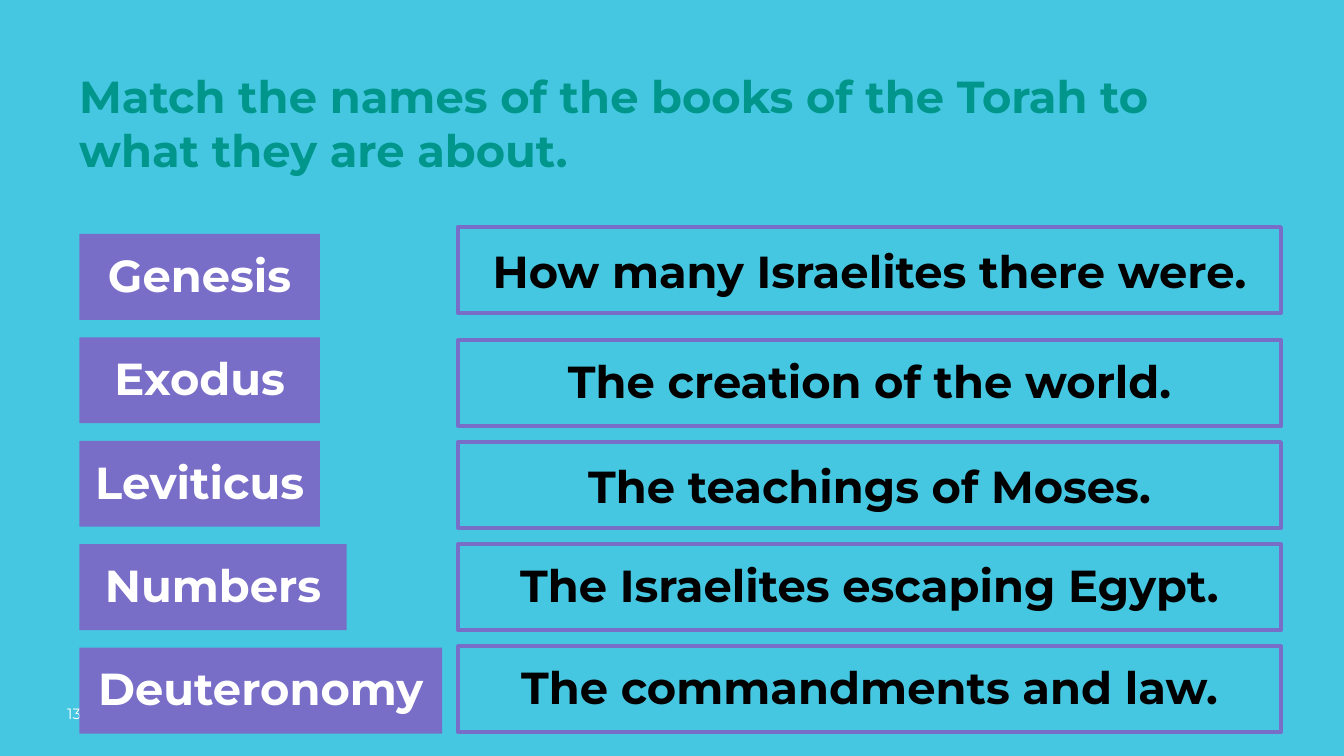
from pptx import Presentation
from pptx.dml.color import RGBColor
from pptx.enum.shapes import MSO_SHAPE
from pptx.enum.text import MSO_ANCHOR, PP_ALIGN
from pptx.util import Inches, Pt

COLORS = {"back": "45C7E1", "title": "00968C", "purple": "786EC8",
          "white": "FFFFFF", "black": "000000"}
TOP, MID = MSO_ANCHOR.TOP, MSO_ANCHOR.MIDDLE
FIRST, STEP, HIGH = 1.74, 0.77, 0.64
BOOKS = [("Genesis", 1.79), ("Exodus", 1.79), ("Leviticus", 1.79),
         ("Numbers", 1.99), ("Deuteronomy", 2.7)]
TOPICS = [("How many Israelites there were.", 1.69, MID),
          ("The creation of the world.", 2.53, TOP),
          ("The teachings of Moses.", 3.29, MID),
          ("The Israelites escaping Egypt.", 4.05, TOP),
          ("The commandments and law.", 4.81, TOP)]


def color(name):
    """Return the named colour."""
    return RGBColor.from_string(COLORS[name])


def write(shape, text, ink, size=24, bold=True, inset=0.1, align=PP_ALIGN.LEFT, anchor=TOP):
    """Fill a shape with one styled paragraph."""
    frame = shape.text_frame
    frame.word_wrap = True
    frame.vertical_anchor = anchor
    frame.margin_left = frame.margin_right = Inches(inset)
    frame.margin_top = frame.margin_bottom = Inches(inset)
    frame.text = text
    para = frame.paragraphs[0]
    para.alignment = align
    font = para.runs[0].font
    font.name, font.size, font.bold = "Montserrat", Pt(size), bold
    font.color.rgb = color(ink)


def add_text(slide, box, text, ink, **style):
    """Add a text box."""
    write(slide.shapes.add_textbox(*map(Inches, box)), text, ink, **style)


def add_card(slide, box, text, ink, solid, anchor=TOP):
    """Add a solid or outlined rectangle with centred text."""
    card = slide.shapes.add_shape(MSO_SHAPE.RECTANGLE, *map(Inches, box))
    card.shadow.inherit = False
    if solid:
        card.fill.solid()
        card.fill.fore_color.rgb = color("purple")
        card.line.fill.background()
    else:
        card.fill.background()
        card.line.color.rgb = color("purple")
        card.line.width = Pt(2.25)
    write(card, text, ink, align=PP_ALIGN.CENTER, anchor=anchor)


def main():
    """Build the matching exercise."""
    deck = Presentation()
    deck.slide_width = Inches(10)
    deck.slide_height = Inches(10 * 9 / 16)
    slide = deck.slides.add_slide(deck.slide_layouts[6])
    slide.background.fill.solid()
    slide.background.fill.fore_color.rgb = color("back")

    add_text(slide, (0.5, 5.24, 0.79, 0.2), "13", "white", size=8, bold=False, inset=0)
    add_text(slide, (0.49, 0.41, 9.01, 1.87),
             "Match the names of the books of the Torah to what they are about.", "title")
    for row, (book, width) in enumerate(BOOKS):
        add_card(slide, (0.59, FIRST + row * STEP, width, HIGH), book, "white", True)
    for topic, top, anchor in TOPICS:
        add_card(slide, (3.41, top, 6.12, HIGH), topic, "black", False, anchor)
    deck.save("out.pptx")


if __name__ == "__main__":
    main()
